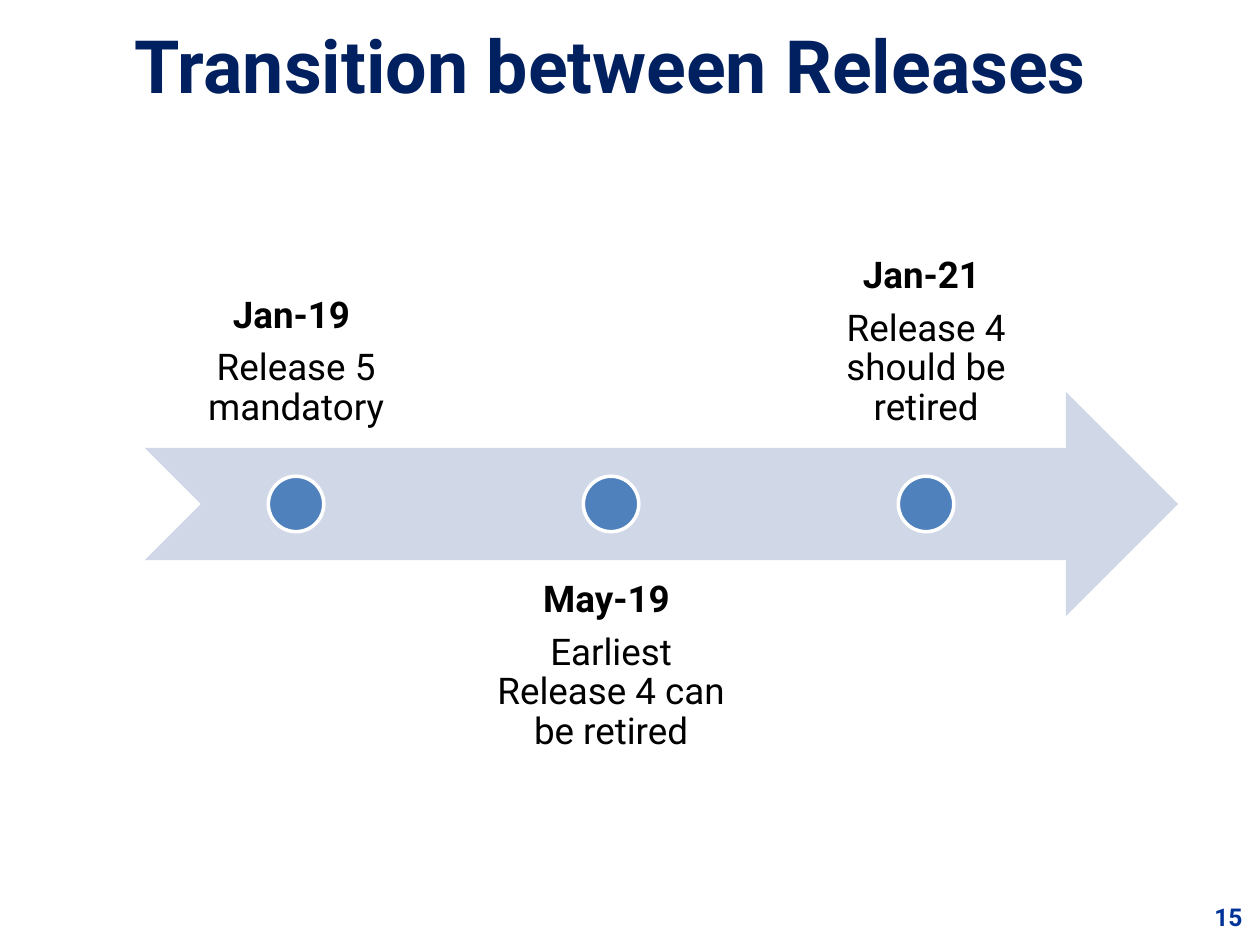
from dataclasses import dataclass

from pptx import Presentation
from pptx.dml.color import RGBColor
from pptx.enum.shapes import MSO_SHAPE
from pptx.enum.text import MSO_ANCHOR, PP_ALIGN
from pptx.util import Inches, Pt


@dataclass(frozen=True)
class Theme:
    font: str = "Roboto"
    title_color: RGBColor = RGBColor(0x00, 0x20, 0x60)
    number_color: RGBColor = RGBColor(0x00, 0x33, 0x99)
    text_color: RGBColor = RGBColor(0x00, 0x00, 0x00)
    arrow_color: RGBColor = RGBColor(0xD0, 0xD8, 0xE8)
    marker_color: RGBColor = RGBColor(0x4F, 0x81, 0xBD)
    white: RGBColor = RGBColor(0xFF, 0xFF, 0xFF)
    title_size: int = 42
    label_size: int = 21
    number_size: int = 14


THEME = Theme()

# Date, event, and whether the label stands above the arrow
MILESTONES = [
    ("Jan-19 ", "Release 5 mandatory", True),
    ("May-19 ", "Earliest Release 4 can be retired", False),
    ("Jan-21 ", "Release 4 should be retired", True),
]
FIRST_CENTER = 2.35
MILESTONE_STEP = 2.5
ARROW_MIDDLE = 4.0
MARKER_SIZE = 0.44
LABEL_WIDTH = 2.38
LABEL_HEIGHT = 1.78
LABEL_INSET = Inches(0.16)
LABEL_TOP_ABOVE = 1.78
LABEL_TOP_BELOW = 4.45


def format_paragraph(paragraph, size, color, bold, alignment):
    paragraph.alignment = alignment
    for run in paragraph.runs:
        font = run.font
        font.name = THEME.font
        font.size = Pt(size)
        font.bold = bold
        font.color.rgb = color


def set_title(slide, text):
    title = slide.shapes.title
    title.left, title.top = Inches(0.83), Inches(0)
    title.width, title.height = Inches(8.03), Inches(1.02)
    title.text_frame.text = text
    title.text_frame.vertical_anchor = MSO_ANCHOR.MIDDLE
    format_paragraph(title.text_frame.paragraphs[0], THEME.title_size,
                     THEME.title_color, True, PP_ALIGN.CENTER)


def add_filled_shape(slide, kind, left, top, width, height, color):
    shape = slide.shapes.add_shape(
        kind, Inches(left), Inches(top), Inches(width), Inches(height))
    shape.shadow.inherit = False
    shape.fill.solid()
    shape.fill.fore_color.rgb = color
    shape.line.fill.background()
    return shape


def add_marker(slide, center):
    marker = add_filled_shape(
        slide, MSO_SHAPE.OVAL, center - MARKER_SIZE / 2,
        ARROW_MIDDLE - MARKER_SIZE / 2, MARKER_SIZE, MARKER_SIZE,
        THEME.marker_color)
    marker.line.color.rgb = THEME.white
    marker.line.width = Pt(2)


def add_label(slide, center, date, event, above):
    top = LABEL_TOP_ABOVE if above else LABEL_TOP_BELOW
    box = slide.shapes.add_textbox(
        Inches(center - LABEL_WIDTH / 2), Inches(top),
        Inches(LABEL_WIDTH), Inches(LABEL_HEIGHT))
    frame = box.text_frame
    frame.word_wrap = True
    frame.vertical_anchor = MSO_ANCHOR.BOTTOM if above else MSO_ANCHOR.TOP
    frame.margin_left = frame.margin_right = LABEL_INSET
    frame.margin_top = frame.margin_bottom = LABEL_INSET
    frame.text = f"{date}\n{event}"
    for paragraph, bold in zip(frame.paragraphs, (True, False)):
        paragraph.line_spacing = 0.9
        paragraph.space_after = Pt(7.35)
        format_paragraph(paragraph, THEME.label_size, THEME.text_color,
                         bold, PP_ALIGN.CENTER)


def add_page_number(slide, number):
    box = slide.shapes.add_textbox(
        Inches(9.41), Inches(7.11), Inches(0.55), Inches(0.34))
    box.text_frame.word_wrap = True
    box.text_frame.text = number
    format_paragraph(box.text_frame.paragraphs[0], THEME.number_size,
                     THEME.number_color, True, PP_ALIGN.RIGHT)


def main():
    presentation = Presentation()
    presentation.slide_width = Inches(10)
    presentation.slide_height = Inches(7.5)
    slide = presentation.slides.add_slide(presentation.slide_layouts[5])

    set_title(slide, "Transition between Releases")
    add_filled_shape(slide, MSO_SHAPE.NOTCHED_RIGHT_ARROW,
                     1.15, 3.11, 8.2, 1.78, THEME.arrow_color)
    for index, (date, event, above) in enumerate(MILESTONES):
        center = FIRST_CENTER + index * MILESTONE_STEP
        add_label(slide, center, date, event, above)
        add_marker(slide, center)
    add_page_number(slide, "15")

    presentation.save("out.pptx")


if __name__ == "__main__":
    main()
